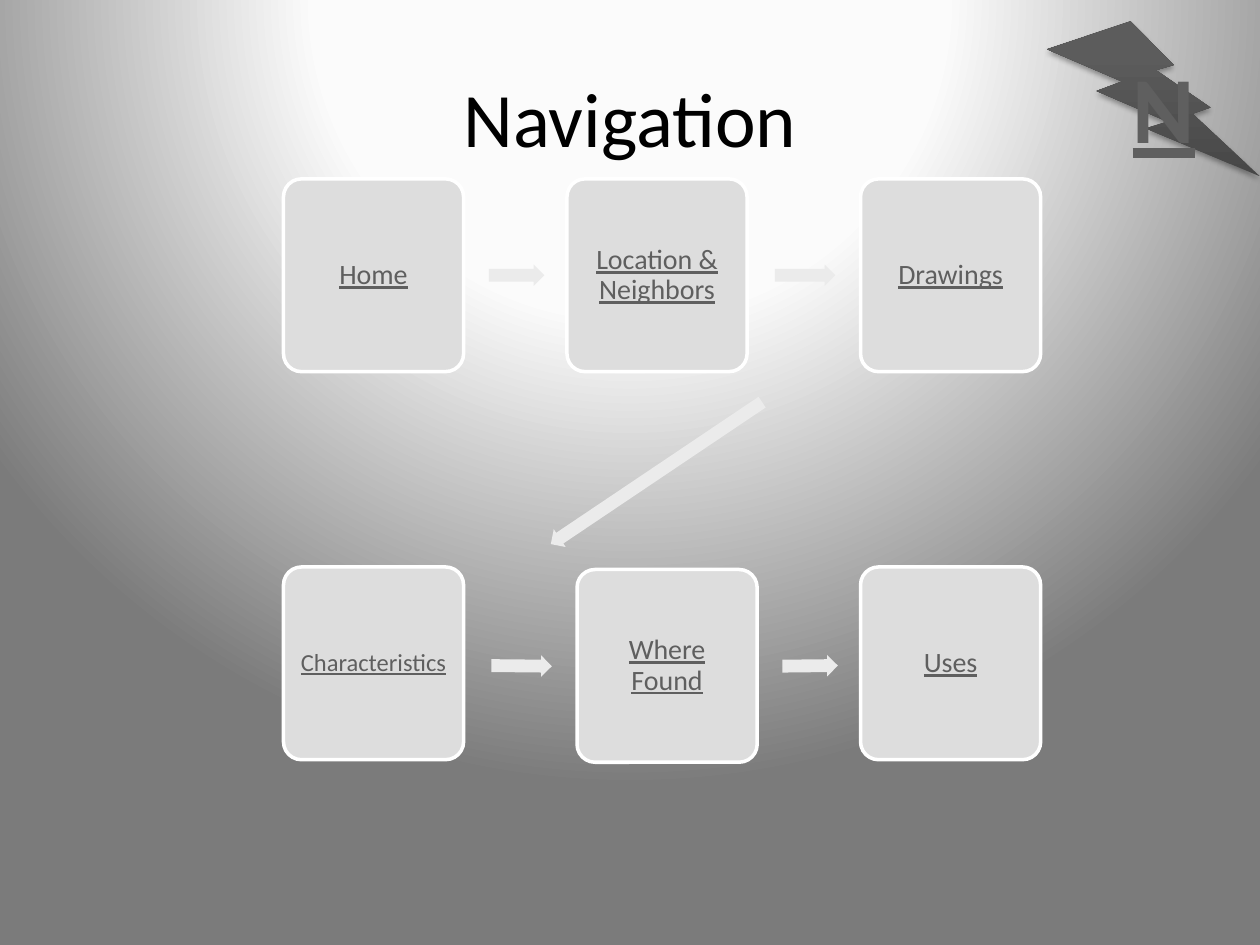
from lxml.etree import SubElement
from pptx import Presentation
from pptx.dml.color import RGBColor
from pptx.enum.shapes import MSO_SHAPE
from pptx.enum.text import MSO_ANCHOR, PP_ALIGN
from pptx.oxml.ns import qn
from pptx.util import Inches, Pt

COLORS = {
    "title": "000000", "link": "5F5F5F", "outline": "FEFEFE",
    "card": "DDDDDD", "border": "FFFFFF", "arrow": "EBEBEB", "shadow": "000000",
}
BACKGROUND_STOPS = [(0, "FCFCFC"), (40, "FBFBFB"), (100, "7B7B7B")]
BOLT_STOPS = [(0, "474747"), (80, "5C5C5C"), (100, "5C5C5C")]

CARD_W, CARD_H = 1.43, 1.53
ARROW_H = 0.17

# left, top, label, size, inset
CARDS = [
    (2.25, 1.42, "Home", 16, 0.07),
    (4.5, 1.42, "Location & Neighbors", 16, 0.07),
    (6.83, 1.42, "Drawings", 16, 0.07),
    (2.25, 4.5, "Characteristics", 14, 0.06),
    (4.58, 4.52, "Where Found", 16, 0.07),
    (6.83, 4.5, "Uses", 16, 0.07),
]
# left, top, length, rotation
ARROWS = [
    (3.88, 2.1, 0.44, 0),
    (6.15, 2.1, 0.48, 0),
    (4.2, 3.67, 2.02, 146.1),
    (3.9, 5.2, 0.48, 0.6),
    (6.21, 5.2, 0.44, 359.4),
]


def rgb(name):
    return RGBColor.from_string(COLORS[name])


def add(parent, tag, **attrs):
    return SubElement(parent, qn(tag), {k: str(v) for k, v in attrs.items()})


def set_gradient(fill, owner, stops):
    """Give a fill its stops and return the element that takes the direction."""
    fill.gradient()
    grad = next(owner.iter(qn("a:gradFill")))
    for child in list(grad):
        grad.remove(child)
    stop_list = add(grad, "a:gsLst")
    for position, color in stops:
        stop = add(stop_list, "a:gs", pos=position * 1000)
        add(stop, "a:srgbClr", val=color)
    return grad


def write(tf, text, size, color="link", bold=False, underline=True,
          anchor=MSO_ANCHOR.MIDDLE, inset=None, spacing=None):
    tf.word_wrap = True
    tf.vertical_anchor = anchor
    if inset is not None:
        tf.margin_left = tf.margin_right = Inches(inset)
        tf.margin_top = tf.margin_bottom = Inches(inset)
    p = tf.paragraphs[0]
    p.alignment = PP_ALIGN.CENTER
    p.line_spacing = spacing
    r = p.add_run()
    r.text = text
    r.font.name = "Calibri"
    r.font.size = Pt(size)
    r.font.bold = bold
    r.font.underline = underline
    r.font.color.rgb = rgb(color)
    return r


def add_shape(s, kind, left, top, width, height, color=None, adjust=()):
    sp = s.shapes.add_shape(kind, Inches(left), Inches(top),
                            Inches(width), Inches(height))
    sp.shadow.inherit = False
    sp.line.fill.background()
    if color:
        sp.fill.solid()
        sp.fill.fore_color.rgb = rgb(color)
    for i, value in enumerate(adjust):
        sp.adjustments[i] = value
    return sp


def add_background(s):
    grad = set_gradient(s.background.fill, s._element, BACKGROUND_STOPS)
    circle = add(grad, "a:path", path="circle")
    add(circle, "a:fillToRect", l=50000, t=-80000, r=50000, b=180000)


def add_bolt(s):
    sp = add_shape(s, MSO_SHAPE.LIGHTNING_BOLT, 8.31, 0.17, 1.69, 1.23)
    grad = set_gradient(sp.fill, sp._element, BOLT_STOPS)
    add(grad, "a:lin", ang=270 * 60000, scaled=0)
    effects = sp._element.spPr.find(qn("a:effectLst"))
    shadow = add(effects, "a:outerShdw", blurRad=Pt(3.1), dist=Pt(1.8),
                 dir=90 * 60000, rotWithShape=0)
    color = add(shadow, "a:srgbClr", val=COLORS["shadow"])
    add(color, "a:alpha", val=35000)


def add_letter(s):
    box = s.shapes.add_textbox(Inches(8.89), Inches(0.34),
                               Inches(0.44), Inches(1.92))
    r = write(box.text_frame, "N", 54, bold=True, anchor=MSO_ANCHOR.TOP)
    rPr = r.font._element
    line = add(rPr, "a:ln", w=Pt(1.4))
    add(add(line, "a:solidFill"), "a:srgbClr", val=COLORS["outline"])
    rPr.insert(0, line)


def add_title(s, text):
    title = s.shapes.title
    title.left, title.top = Inches(0.5), Inches(0.3)
    title.width, title.height = Inches(9), Inches(1.25)
    write(title.text_frame, text, 44, color="title", underline=False)


def add_card(s, left, top, label, size, inset):
    sp = add_shape(s, MSO_SHAPE.ROUNDED_RECTANGLE, left, top, CARD_W, CARD_H,
                   "card", [0.1])
    sp.line.color.rgb = rgb("border")
    sp.line.width = Pt(2)
    write(sp.text_frame, label, size, inset=inset, spacing=0.9)


def add_arrow(s, left, top, length, rotation):
    sp = add_shape(s, MSO_SHAPE.RIGHT_ARROW, left, top, length, ARROW_H,
                   "arrow", [0.6, 0.5])
    sp.rotation = rotation


def main():
    prs = Presentation()
    prs.slide_width, prs.slide_height = Inches(10), Inches(7.5)
    s = prs.slides.add_slide(prs.slide_layouts[5])

    # Backdrop and corner emblem
    add_background(s)
    add_bolt(s)
    add_letter(s)

    # Title and the chain of pages
    add_title(s, "Navigation")
    for card in CARDS:
        add_card(s, *card)
    for arrow in ARROWS:
        add_arrow(s, *arrow)

    prs.save("out.pptx")


if __name__ == "__main__":
    main()
